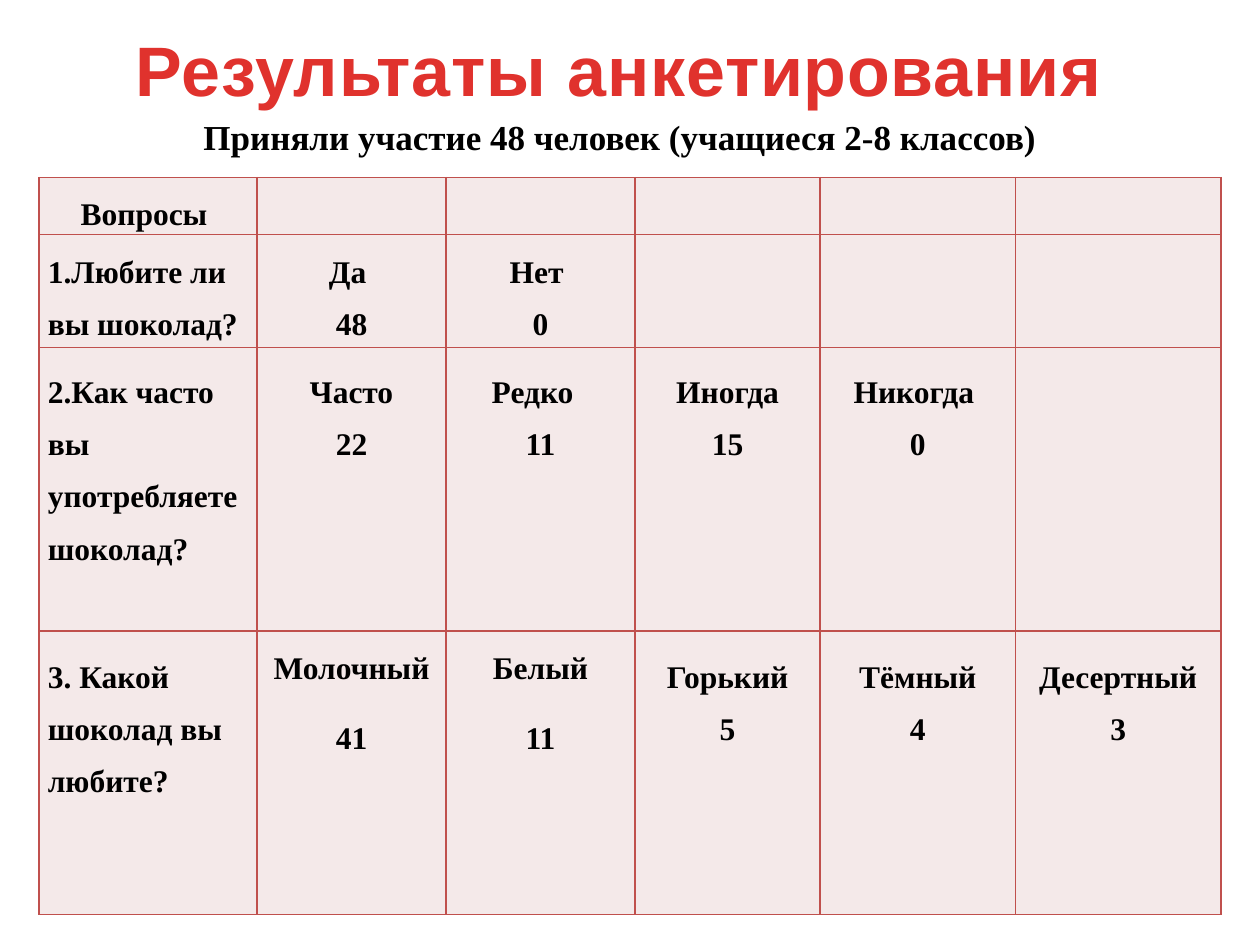
"""Build a slide with the results of a chocolate survey in a table."""
import pptx
import pptx.util
import pptx.dml.color
import pptx.enum.text
import pptx.oxml
import pptx.oxml.ns

Inch, Pt = pptx.util.Inches, pptx.util.Pt
Align = pptx.enum.text.PP_ALIGN
Anchor = pptx.enum.text.MSO_ANCHOR


def tint(code):
    return pptx.dml.color.RGBColor.from_string(code)


def write(para, text, face, size, shade, **form):
    run = para.add_run()
    run.text = text
    for key, val in dict(name=face, size=Pt(size), bold=True).items():
        setattr(run.font, key, val)
    run.font.color.rgb = tint(shade)
    for key, val in form.items():
        setattr(para, key, val)
    return run


deck = pptx.Presentation()
deck.slide_width, deck.slide_height = Inch(10), Inch(7.5)
slide = deck.slides.add_slide(deck.slide_layouts[0])
serif = "Times New Roman"

heads = [
    ("Результаты анкетирования ", (0.23, 0.16, 9.53, 0.77), "Arial", 40, "E0322D"),
    ("Приняли участие 48 человек (учащиеся 2-8 классов)", (0, 0.86, 9.84, 0.44), serif, 20, "000000"),
]
for box, (text, place, face, size, shade) in zip(slide.placeholders, heads):
    for key, val in zip(("left", "top", "width", "height"), place):
        setattr(box, key, Inch(val))
    frame = box.text_frame
    frame.auto_size = pptx.enum.text.MSO_AUTO_SIZE.NONE
    frame.word_wrap = True
    frame.vertical_anchor = Anchor.MIDDLE
    write(frame.paragraphs[0], text, face, size, shade, alignment=Align.CENTER, space_before=Pt(0))
slide.shapes.title.text_frame.paragraphs[0].runs[0].font._element.set("spc", "50")

wides = [1.73, 1.5, 1.5, 1.47, 1.55, 1.63]
highs = [0.45, 0.9, 2.25, 2.25]
pads = [0.02, 0.03, 0.08, 0.09]
rows = [
    [["Вопросы "]],
    [["1.Любите ли вы шоколад?"], ["Да ", "48"], ["Нет ", "0"]],
    [["2.Как часто вы употребляете шоколад?"], ["Часто", "22"], ["Редко  ", "11"],
     ["Иногда", "15"], ["Никогда ", "0"]],
    [["3. Какой шоколад вы любите?"], ["Молочный", "41"], ["Белый", "11"],
     ["Горький", "5"], ["Тёмный", "4"], ["Десертный", "3"]],
]
loose = ("Молочный", "Белый")

grid = slide.shapes.add_table(
    len(highs), len(wides), Inch(0.31), Inch(1.41), Inch(sum(wides)), Inch(sum(highs))).table
for col, wide in zip(grid.columns, wides):
    col.width = Inch(wide)
for row, high in zip(grid.rows, highs):
    row.height = Inch(high)

edge = ('<a:{} {} w="12700"><a:solidFill><a:srgbClr val="C0504D"/></a:solidFill></a:{}>')
space = pptx.oxml.ns.nsdecls("a")
for r, row in enumerate(rows):
    for c in range(len(wides)):
        cell = grid.cell(r, c)
        texts = row[c] if c < len(row) else []
        wide = bool(texts) and texts[0] in loose
        look = dict(margin_left=0.07, margin_right=0.07, margin_bottom=0,
                    margin_top=0.16 if wide else pads[r])
        for key, val in look.items():
            setattr(cell, key, Inch(val))
        cell.vertical_anchor = Anchor.TOP
        cell.fill.solid()
        cell.fill.fore_color.rgb = tint("F4E9E9")
        props = cell._tc.get_or_add_tcPr()
        for i, side in enumerate(("lnL", "lnR", "lnT", "lnB")):
            props.insert(i, pptx.oxml.parse_xml(edge.format(side, space, side)))
        for n, text in enumerate(texts):
            para = cell.text_frame.add_paragraph() if n else cell.text_frame.paragraphs[0]
            write(para, text, serif, 18, "000000",
                  alignment=Align.LEFT if r and not c else Align.CENTER,
                  line_spacing=1.0 if wide else 1.5,
                  space_before=Pt(20 if wide and n else 0))

deck.save("out.pptx")
